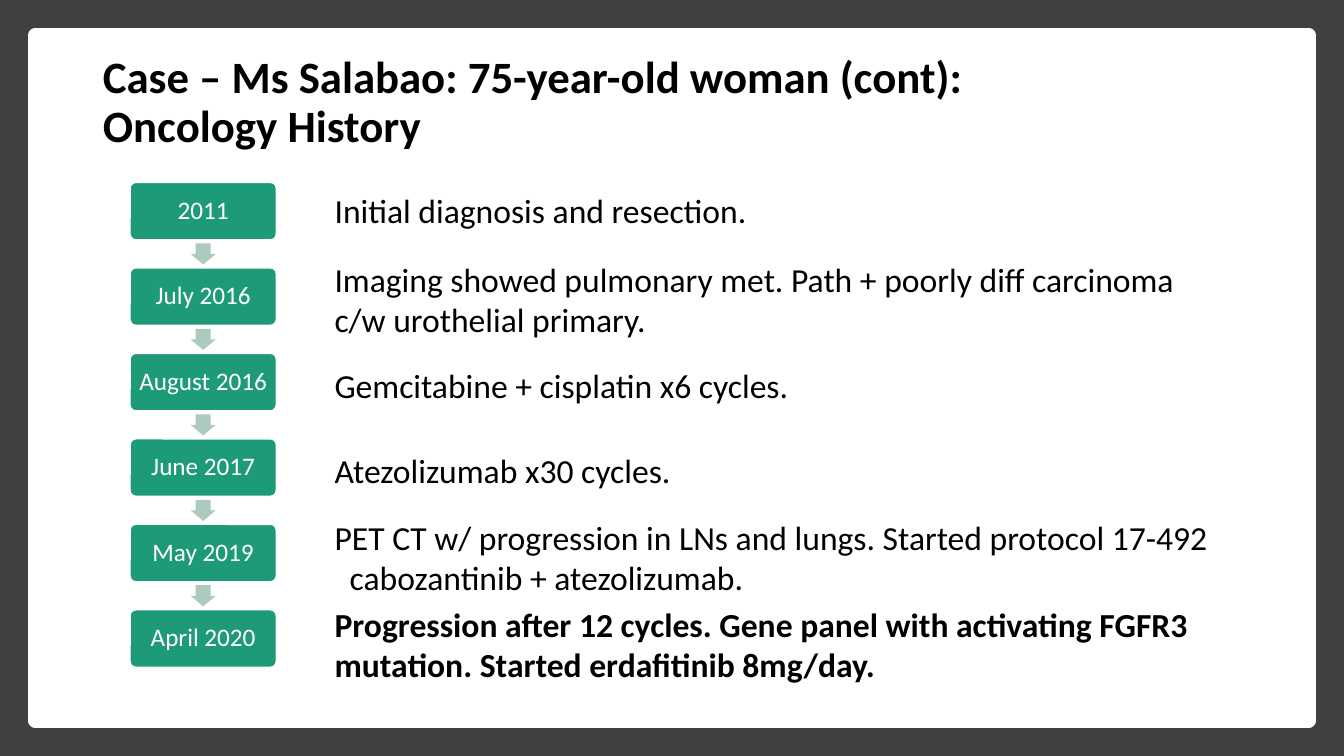
import pptx
import pptx.dml.color
import pptx.enum.shapes
import pptx.enum.text
import pptx.util

Inches = pptx.util.Inches
SHAPES = pptx.enum.shapes.MSO_SHAPE
ANCHOR = pptx.enum.text.MSO_ANCHOR
ALIGN = pptx.enum.text.PP_ALIGN

WIDTH, HEIGHT = 13.33, 7.5
TITLE = ["Case – Ms Salabao: 75-year-old woman (cont):", "Oncology History"]
DATES = ["2011", "July 2016", "August 2016", "June 2017", "May 2019", "April 2020"]

# Each event: box, lines of text, format
EVENTS = [
    ((3.22, 1.88, 9.19, 0.55), ["Initial diagnosis and resection."], {"spacing": 0.9}),
    ((3.22, 2.52, 8.96, 0.91),
     ["Imaging showed pulmonary met. Path + poorly diff carcinoma c/w urothelial primary."], {}),
    ((3.22, 3.57, 7.94, 0.5), ["Gemcitabine + cisplatin x6 cycles."], {}),
    ((3.22, 4.41, 3.56, 0.5), ["Atezolizumab x30 cycles."], {}),
    ((3.22, 5.08, 9.44, 0.91),
     ["PET CT w/ progression in LNs and lungs. Started protocol 17-492",
      "cabozantinib + atezolizumab."], {"later_indent": 0.15}),
    ((3.22, 5.94, 9.43, 0.91),
     ["Progression after 12 cycles. Gene panel with activating FGFR3 mutation. "
      "Started erdafitinib 8mg/day."], {"bold": True}),
]


def colour(value):
    return pptx.dml.color.RGBColor.from_string(value)


def write_text(shape, lines, size=24, ink="000000", bold=False, align=ALIGN.LEFT,
               anchor=ANCHOR.TOP, spacing=1.0, inset=None, later_indent=0):
    frame = shape.text_frame
    frame.word_wrap = True
    frame.auto_size = pptx.enum.text.MSO_AUTO_SIZE.NONE
    frame.vertical_anchor = anchor
    if inset is not None:
        frame.margin_left = frame.margin_right = Inches(inset)
        frame.margin_top = frame.margin_bottom = Inches(inset)
    for index, line in enumerate(lines):
        para = frame.paragraphs[0] if index == 0 else frame.add_paragraph()
        para.alignment = align
        para.line_spacing = spacing
        para.space_before = pptx.util.Pt(0)
        if index and later_indent:
            para._p.get_or_add_pPr().set("marL", str(Inches(later_indent)))
        span = para.add_run()
        span.text = line
        span.font.name = "Calibri"
        span.font.size = pptx.util.Pt(size)
        span.font.bold = bold
        span.font.color.rgb = colour(ink)


def add_block(page, kind, box, fill, line=None, line_width=1):
    shape = page.shapes.add_shape(kind, *map(Inches, box))
    shape.shadow.inherit = False
    shape.fill.solid()
    shape.fill.fore_color.rgb = colour(fill)
    if line:
        shape.line.color.rgb = colour(line)
        shape.line.width = pptx.util.Pt(line_width)
    else:
        shape.line.fill.background()
    return shape


def add_frame(page, box, border):
    left, top, width, height = box
    add_block(page, SHAPES.RECTANGLE, box, "404040")
    panel = (left + border, top + border, width - 2 * border, height - 2 * border)
    add_block(page, SHAPES.RECTANGLE, panel, "FFFFFF", "FFFFFF", 10)


def add_title(page, box):
    title = page.shapes.title
    title.left, title.top, title.width, title.height = map(Inches, box)
    write_text(title, TITLE, size=32, bold=True, anchor=ANCHOR.MIDDLE, spacing=0.9)
    # Bring the title in front of the white panel
    title.element.getparent().append(title.element)


def add_timeline(page, box):
    left, top, width, height = box
    step_height, arrow_width, arrow_height = 0.57, 0.25, 0.21
    pitch = (height - step_height) / (len(DATES) - 1)
    for index, date in enumerate(DATES):
        step_top = top + index * pitch
        step = add_block(page, SHAPES.ROUNDED_RECTANGLE,
                         (left, step_top, width, step_height), "1D9A78", "FFFFFF")
        step.adjustments[0] = 0.1
        write_text(step, [date], size=18, ink="FFFFFF", align=ALIGN.CENTER,
                   anchor=ANCHOR.MIDDLE, spacing=0.9, inset=0.07)
        # Arrow centred in the gap to the next step
        if index < len(DATES) - 1:
            arrow_top = step_top + (step_height + pitch - arrow_height) / 2
            arrow = add_block(page, SHAPES.DOWN_ARROW,
                              (left + (width - arrow_width) / 2, arrow_top,
                               arrow_width, arrow_height), "ACCABE")
            arrow.adjustments[0], arrow.adjustments[1] = 0.6, 0.5


def add_event(page, box, lines, style):
    write_text(page.shapes.add_textbox(*map(Inches, box)), lines, **style)


def main():
    deck = pptx.Presentation()
    deck.slide_width, deck.slide_height = Inches(WIDTH), Inches(HEIGHT)
    page = deck.slides.add_slide(deck.slide_layouts.get_by_name("Title Only"))
    add_frame(page, (0, 0, WIDTH, HEIGHT), 0.35)
    add_title(page, (0.92, 0.3, 11.5, 1.45))
    add_timeline(page, (1.29, 1.81, 1.45, 4.81))
    for box, lines, style in EVENTS:
        add_event(page, box, lines, style)
    deck.save("out.pptx")


if __name__ == "__main__":
    main()
